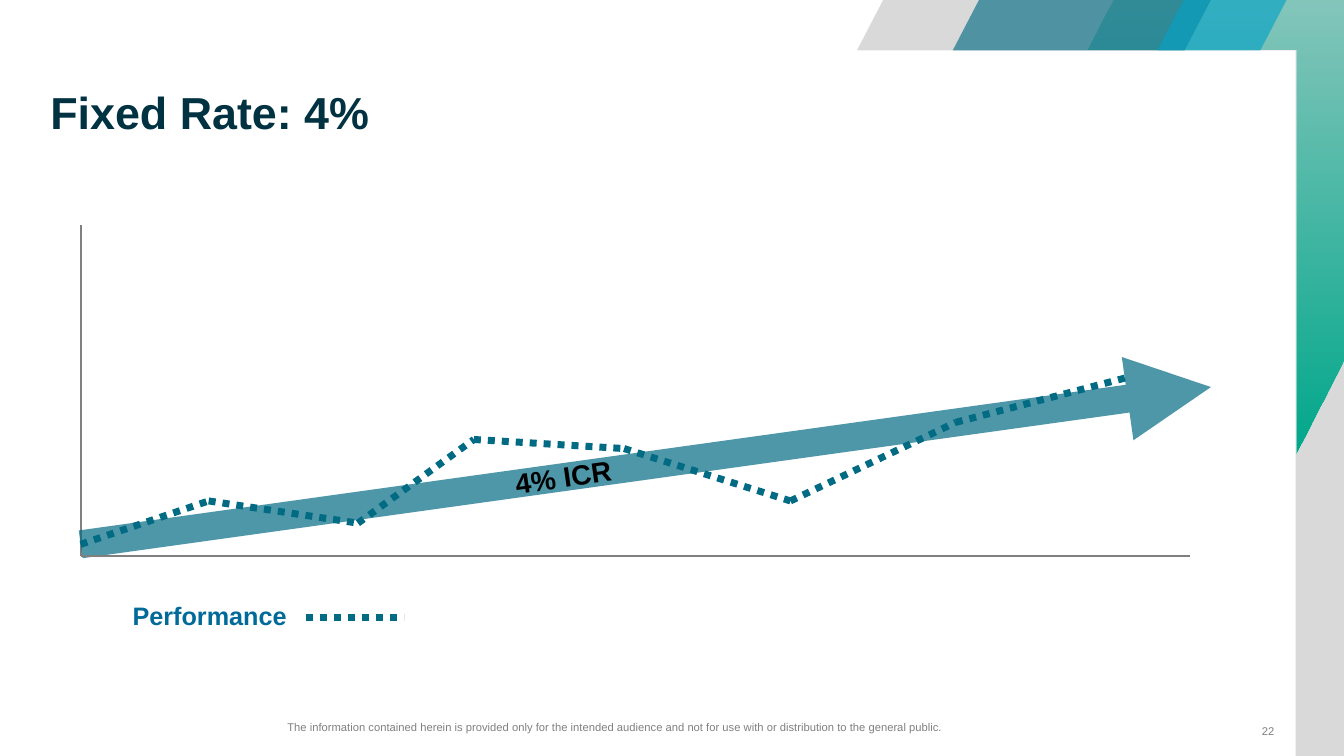
import itertools

import lxml.etree
import pptx
import pptx.dml.color
import pptx.enum.dml
import pptx.enum.shapes
import pptx.enum.text
import pptx.oxml.ns
import pptx.util

PX = 9144
FONT = "Arial"
COLORS = {
    "grey_band": "D9D9D9",
    "green": "00A88C",
    "teal": "026B84",
    "cyan": "05A2C6",
    "axis": "808080",
    "title": "003241",
    "label": "000000",
    "legend": "006A98",
}
ALIGN = pptx.enum.text.PP_ALIGN
ANCHOR = pptx.enum.text.MSO_ANCHOR


def rgb(name):
    """Return the palette colour of that name."""
    return pptx.dml.color.RGBColor.from_string(COLORS[name])


def add_child(parent, tag, **attributes):
    """Append a DrawingML element to a parent."""
    child = lxml.etree.SubElement(parent, pptx.oxml.ns.qn(tag))
    for key, value in attributes.items():
        child.set(key, str(value))
    return child


def set_opacity(element, *percents):
    """Give the colours inside an element their opacities, in order."""
    colors = element.iter(pptx.oxml.ns.qn("a:srgbClr"))
    for color, percent in zip(colors, percents):
        add_child(color, "a:alpha", val=percent * 1000)


def add_outline(page, box, points):
    """Draw a closed borderless outline from points relative to the box."""
    left, top = box[:2]
    placed = [(left + x, top + y) for x, y in points]
    builder = page.shapes.build_freeform(*placed[0], scale=PX)
    builder.add_line_segments(placed[1:], close=True)
    shape = builder.convert_to_shape()
    shape.shadow.inherit = False
    shape.line.fill.background()
    return shape


def add_line(page, box, start, end, color, width, dash=None):
    """Draw a straight line between two points relative to the box."""
    left, top = box[:2]
    ends = (left + start[0], top + start[1], left + end[0], top + end[1])
    line = page.shapes.add_connector(
        pptx.enum.shapes.MSO_CONNECTOR.STRAIGHT, *(value * PX for value in ends)
    )
    line.line.color.rgb = rgb(color)
    line.line.width = pptx.util.Pt(width)
    if dash:
        line.line.dash_style = dash
    add_child(line._element.spPr, "a:effectLst")
    return line


def add_text(page, box, text, size, color, bold=False, align=ALIGN.LEFT,
             anchor=ANCHOR.TOP, spacing=1.0, wrap=True):
    """Place one line of text in a box without insets."""
    holder = page.shapes.add_textbox(*(value * PX for value in box))
    frame = holder.text_frame
    frame.margin_left = frame.margin_right = 0
    frame.margin_top = frame.margin_bottom = 0
    frame.word_wrap = wrap
    frame.vertical_anchor = anchor
    frame.text = text
    para = frame.paragraphs[0]
    para.alignment = align
    para.line_spacing = spacing
    font = para.runs[0].font
    font.name = FONT
    font.size = pptx.util.Pt(size)
    font.bold = bold
    font.color.rgb = rgb(color)
    return holder


def draw_band(page, box):
    """Draw the slanted bands along the top and right edges."""
    width, height = box[2:]
    depth, slant, edge = 50, 26, 48
    inner = width - edge

    grey = add_outline(page, box, [
        (slant, 0), (width, 0), (width, height),
        (inner, height), (inner, depth), (0, depth),
    ])
    grey.fill.solid()
    grey.fill.fore_color.rgb = rgb("grey_band")

    green = add_outline(page, box, [
        (229 + slant, 0), (width, 0), (width, 356),
        (inner, 450), (inner, depth), (229, depth),
    ])
    green.fill.gradient()
    green.fill.gradient_angle = 270
    for stop, position in zip(green.fill.gradient_stops, (0, 1)):
        stop.color.rgb = rgb("green")
        stop.position = position
    set_opacity(green._element.spPr, 39, 100)

    for left, right, color in ((95, 351, "teal"), (298, 426, "cyan")):
        stripe = add_outline(page, box, [
            (left + slant, 0), (right, 0), (right - slant, depth), (left, depth),
        ])
        stripe.fill.solid()
        stripe.fill.fore_color.rgb = rgb(color)
        set_opacity(stripe._element.spPr, 64)


def draw_chart(page, box):
    """Draw the axes, the fixed rate arrow and the performance line."""
    left, top, width, height = box
    dots = pptx.enum.dml.MSO_LINE.ROUND_DOT
    add_line(page, box, (0, 0), (0, height), "axis", 1.5)

    arrow = add_line(page, box, (0, 317), (1121, 161), "teal", 20)
    set_opacity(arrow._element.spPr, 70)
    add_child(arrow.line._get_or_add_ln(), "a:tailEnd", type="triangle")

    rate = add_text(page, (left + 431, top + 237, 97, 30), "4% ICR", 20,
                    "label", bold=True, spacing=0.9, wrap=False)
    rate.rotation = -8.1

    performance = [(0, 317), (127, 274), (275, 296), (390, 213),
                   (539, 222), (704, 274), (868, 196), (1036, 152)]
    for start, end in itertools.pairwise(performance):
        add_line(page, box, start, end, "teal", 5, dots)
    add_line(page, box, (width, height), (0, height), "axis", 1.5)


def draw_legend(page, box):
    """Draw the legend text and its dotted sample."""
    left, top, width, height = box
    add_text(page, (left, top, 214, height), "Performance", 18, "legend",
             bold=True, align=ALIGN.CENTER, anchor=ANCHOR.MIDDLE)
    add_line(page, box, (203, 22), (width, 22), "teal", 5,
             pptx.enum.dml.MSO_LINE.ROUND_DOT)


def draw_footer(page, box):
    """Write the disclaimer and the page number."""
    left, top, width, height = box
    add_text(page, (left, top, 670, height),
             "The information contained herein is provided only for the intended "
             "audience and not for use with or distribution to the general public.",
             8, "axis", anchor=ANCHOR.MIDDLE)
    add_text(page, (left + width - 38, top + 4, 38, height), "22", 8, "axis",
             align=ALIGN.RIGHT, anchor=ANCHOR.MIDDLE)


def main():
    """Build the slide and save the deck."""
    deck = pptx.Presentation()
    deck.slide_width = 1333 * PX
    deck.slide_height = 750 * PX
    page = deck.slides.add_slide(deck.slide_layouts[6])
    draw_band(page, (850, 0, 483, 750))
    add_text(page, (50, 90, 1000, 65), "Fixed Rate: 4%", 32, "title",
             bold=True, spacing=0.9)
    draw_chart(page, (80, 223, 1100, 329))
    draw_legend(page, (101, 591, 300, 40))
    draw_footer(page, (285, 709, 979, 24))
    deck.save("out.pptx")


if __name__ == "__main__":
    main()
